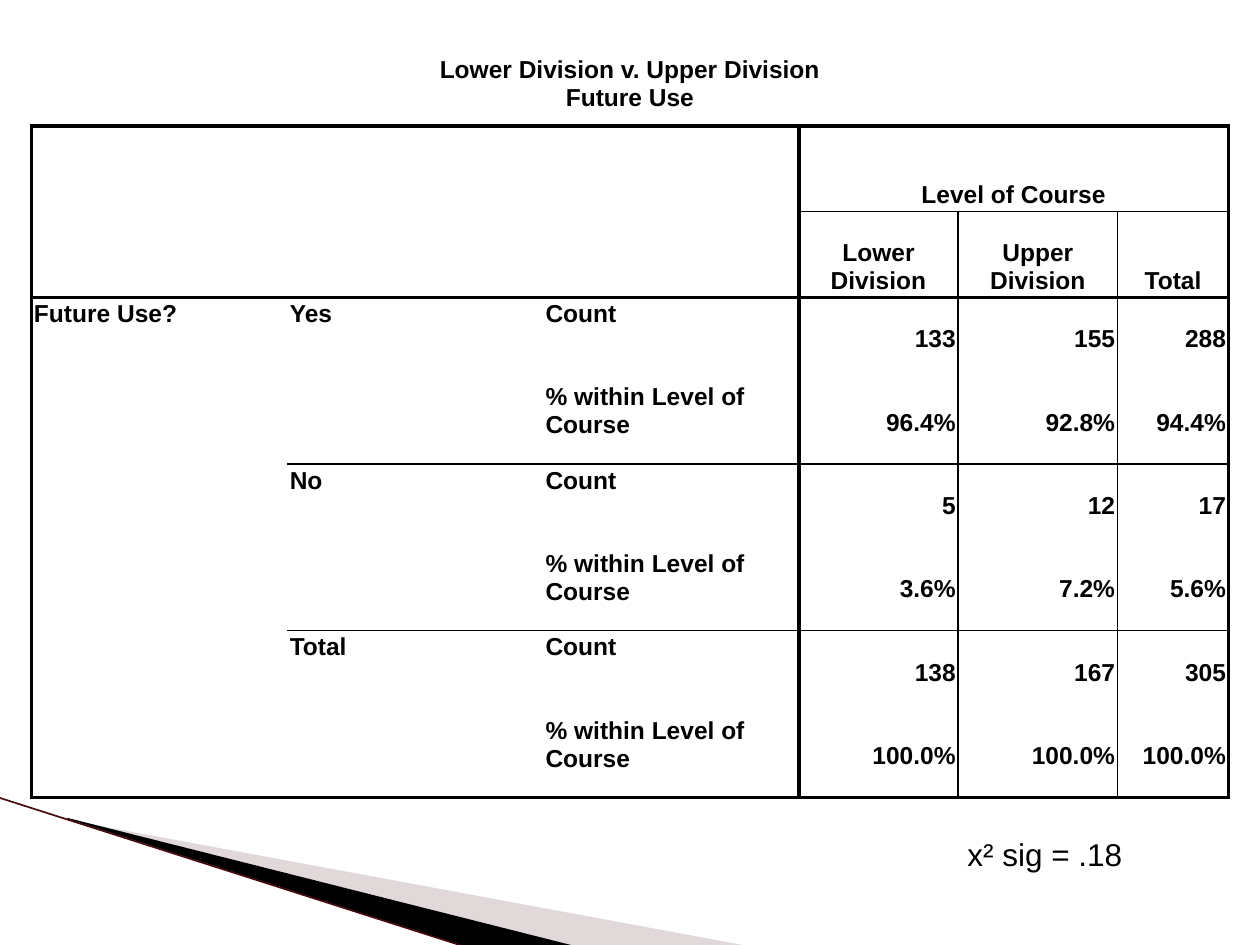
import pptx
import pptx.util
import pptx.dml.color
import pptx.enum.shapes
import pptx.enum.text
import pptx.oxml
import pptx.oxml.ns

Inches, Pt = pptx.util.Inches, pptx.util.Pt
Align = pptx.enum.text.PP_ALIGN
Anchor = pptx.enum.text.MSO_ANCHOR

BLACK, WHITE, MAROON = "000000", "FFFFFF", "470A10"
THICK, THIN = 2.25, 1

TITLE = ["Lower Division v. Upper Division", "Future Use"]
SPAN_HEAD = "Level of Course"
HEADS = ["Lower Division", "Upper Division", "Total"]
STUB = "Future Use?"
MEASURES = ["Count", "% within Level of Course"]
GROUPS = [
    ("Yes", [["133", "155", "288"], ["96.4%", "92.8%", "94.4%"]]),
    ("No", [["5", "12", "17"], ["3.6%", "7.2%", "5.6%"]]),
    ("Total", [["138", "167", "305"], ["100.0%", "100.0%", "100.0%"]]),
]
NOTE = "x² sig = .18"

WIDE, HIGH = 9.5, 6
LABELS, LAST = [2.03] * 3, 0.88
WIDTHS = LABELS + [(WIDE - sum(LABELS) - LAST) / 2] * 2 + [LAST]
TOPS = [0.67, 0.68, 0.68]
HEIGHTS = TOPS + [(HIGH - sum(TOPS)) / 6] * 6

# First and last cell of each merged block, as (row, column)
MERGES = [((0, 0), (0, 5)), ((1, 3), (1, 5)), ((3, 0), (8, 0)),
          ((3, 1), (4, 1)), ((5, 1), (6, 1)), ((7, 1), (8, 1))]

# Colour, opacity in percent, and corners in hundredths of an inch
WEDGES = [
    ("B4A0A1", 40, [(55, 651), (595, 751), (456, 751), (55, 650)]),
    (BLACK, 100, [(53, 649), (457, 751), (372, 752), (54, 650)]),
]


def paint(target, color):
    """Give a fill or line format one solid colour."""
    target.solid()
    target.fore_color.rgb = pptx.dml.color.RGBColor.from_string(color)


def style(run, size, bold=False):
    run.font.name = "Arial"
    run.font.size = Pt(size)
    run.font.bold = bold
    paint(run.font.fill, BLACK)


def add_wedge(slide, color, alpha, points):
    pen = slide.shapes.build_freeform(*points[0], scale=Inches(0.01))
    pen.add_line_segments(points[1:], close=True)
    shape = pen.convert_to_shape()
    shape.shadow.inherit = False
    paint(shape.fill, color)
    shape.line.fill.background()
    if alpha < 100:
        tint = shape._element.spPr.find(".//" + pptx.oxml.ns.qn("a:srgbClr"))
        tint.append(pptx.oxml.parse_xml(
            f'<a:alpha {pptx.oxml.ns.nsdecls("a")} val="{alpha * 1000}"/>'))


def add_edge(slide):
    line = slide.shapes.add_connector(
        pptx.enum.shapes.MSO_CONNECTOR.STRAIGHT,
        Inches(-0.01), Inches(6.33), Inches(3.71), Inches(7.52))
    paint(line.line.fill, MAROON)
    line.line.width = Pt(0.95)
    line._element.spPr.append(pptx.oxml.parse_xml(
        f'<a:effectLst {pptx.oxml.ns.nsdecls("a")}/>'))


def rule_across(y, col):
    """Width of the horizontal rule above row y, or 0 for none."""
    if y in (1, 3, len(HEIGHTS)):
        return THICK
    if y == 2:
        return THIN if col >= 3 else 0
    return THIN if y in (5, 7) and col >= 1 else 0


def rule_down(x, row):
    """Width of the vertical rule left of column x, or 0 for none."""
    if row == 0:
        return 0
    if x in (0, 3, len(WIDTHS)):
        return THICK
    return THIN if x in (4, 5) and row >= 2 else 0


def set_rules(cell, first, last):
    """Draw the rules around the block from first to last."""
    (top, left), (bottom, right) = first, last
    rules = [("L", rule_down(left, top)), ("R", rule_down(right + 1, top)),
             ("T", rule_across(top, left)), ("B", rule_across(bottom + 1, left))]
    props = cell._tc.get_or_add_tcPr()
    for spot, (side, width) in enumerate(rules):
        ink = (f'<a:solidFill><a:srgbClr val="{BLACK}"/></a:solidFill>'
               if width else "<a:noFill/>")
        props.insert(spot, pptx.oxml.parse_xml(
            f'<a:ln{side} {pptx.oxml.ns.nsdecls("a")} '
            f'w="{int(Pt(width))}">{ink}</a:ln{side}>'))


def write(cell, lines, align, anchor):
    cell.vertical_anchor = anchor
    frame = cell.text_frame
    for spot, text in enumerate(lines):
        para = frame.add_paragraph() if spot else frame.paragraphs[0]
        para.alignment = align
        para.line_spacing = Pt(16)
        run = para.add_run()
        run.text = text
        style(run, 14, True)


def add_grid(slide):
    grid = slide.shapes.add_table(
        len(HEIGHTS), len(WIDTHS), Inches(0.25), Inches(0.33),
        Inches(WIDE), Inches(HIGH)).table
    grid.first_row = grid.horz_banding = False
    ends = dict(MERGES)
    for first, last in MERGES:
        grid.cell(*first).merge(grid.cell(*last))
    for col, width in enumerate(WIDTHS):
        grid.columns[col].width = Inches(width)
    for row, height in enumerate(HEIGHTS):
        grid.rows[row].height = Inches(height)
        for col in range(len(WIDTHS)):
            cell, spot = grid.cell(row, col), (row, col)
            cell.margin_left = cell.margin_right = Inches(0.02)
            cell.margin_top = cell.margin_bottom = Inches(0.02)
            paint(cell.fill, WHITE)
            set_rules(cell, spot, ends.get(spot, spot))

    write(grid.cell(0, 0), TITLE, Align.CENTER, Anchor.MIDDLE)
    write(grid.cell(1, 3), [SPAN_HEAD], Align.CENTER, Anchor.BOTTOM)
    write(grid.cell(3, 0), [STUB], Align.LEFT, Anchor.TOP)
    for col, head in enumerate(HEADS, 3):
        write(grid.cell(2, col), [head], Align.CENTER, Anchor.BOTTOM)
    for spot, (name, rows) in enumerate(GROUPS):
        top = 3 + 2 * spot
        write(grid.cell(top, 1), [name], Align.LEFT, Anchor.TOP)
        for row, (label, values) in enumerate(zip(MEASURES, rows), top):
            write(grid.cell(row, 2), [label], Align.LEFT, Anchor.TOP)
            for col, value in enumerate(values, 3):
                write(grid.cell(row, col), [value], Align.RIGHT, Anchor.MIDDLE)


def add_note(slide):
    box = slide.shapes.add_textbox(
        Inches(7.58), Inches(6.58), Inches(2.17), Inches(0.42))
    box.text_frame.word_wrap = True
    run = box.text_frame.paragraphs[0].add_run()
    run.text = NOTE
    style(run, 18)


def main():
    deck = pptx.Presentation()
    deck.slide_width, deck.slide_height = Inches(10), Inches(7.5)
    slide = deck.slides.add_slide(deck.slide_layouts[6])
    paint(slide.background.fill, WHITE)
    for wedge in WEDGES:
        add_wedge(slide, *wedge)
    add_edge(slide)
    add_note(slide)
    add_grid(slide)
    deck.save("out.pptx")


if __name__ == "__main__":
    main()
